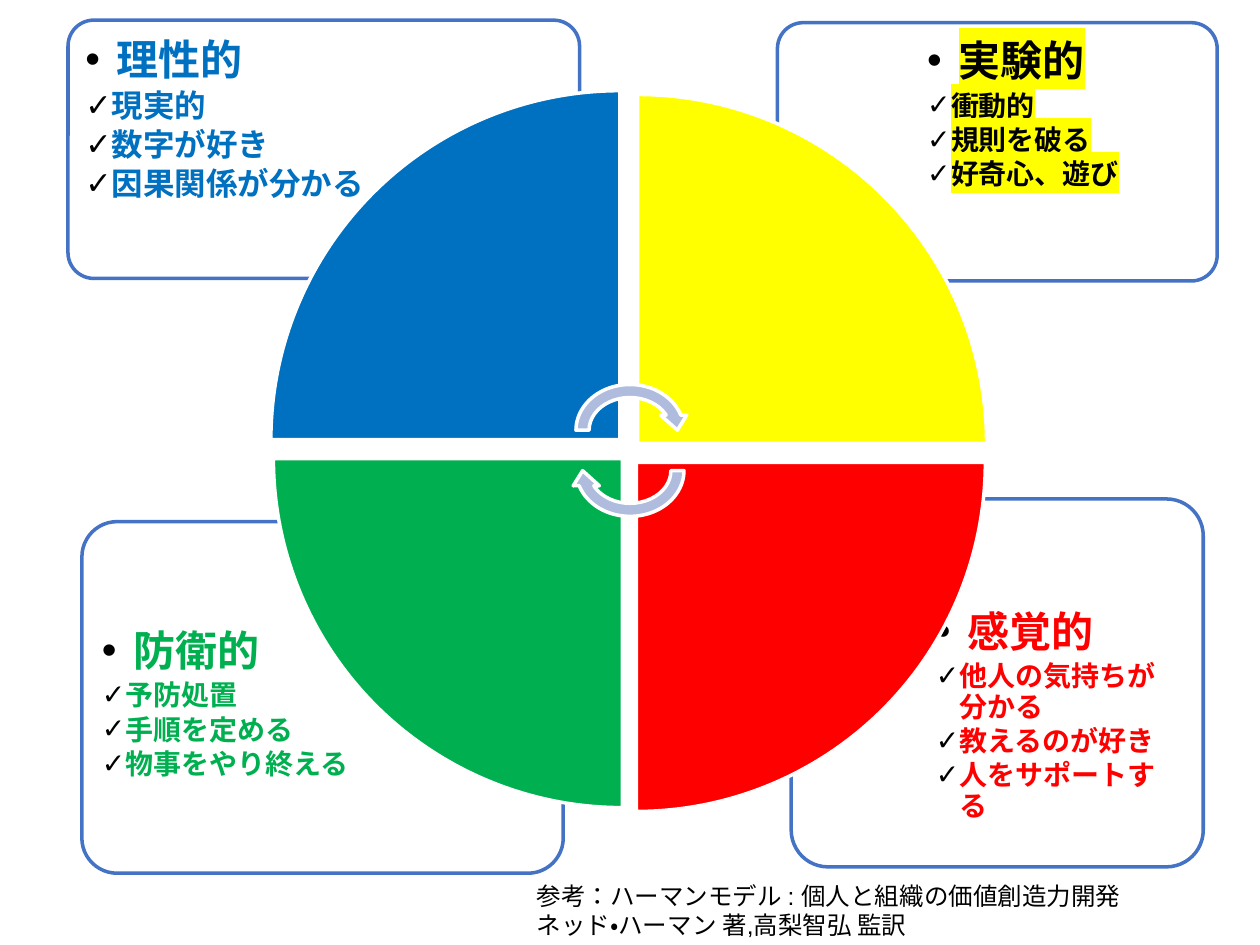
import pptx
import pptx.util
import pptx.dml.color
import pptx.enum.lang
import pptx.enum.shapes
import pptx.enum.text
import pptx.oxml
from pptx.oxml.ns import nsdecls

Inches, Pt = pptx.util.Inches, pptx.util.Pt
RGB = pptx.dml.color.RGBColor.from_string
KIND = pptx.enum.shapes.MSO_SHAPE

theme = {
    "font": "Arial", "black": "000000", "white": "FFFFFF", "edge": "4472C4",
    "arrow": "B0BCDE", "blue": "0070C0", "yellow": "FFFF00",
    "red": "FF0000", "green": "00B050",
    "head": 24, "item": 16, "large": 18, "note": 14, "line": 2,
}

deck = pptx.Presentation()
deck.slide_width, deck.slide_height = Inches(10), Inches(7.5)
slide = deck.slides.add_slide(deck.slide_layouts[6])


def draw(kind, box, fill, line, turn=0):
    shape = slide.shapes.add_shape(kind, *map(Inches, box))
    shape.shadow.inherit = False
    shape.rotation = turn
    shape.fill.solid()
    shape.fill.fore_color.rgb = RGB(theme[fill])
    shape.line.color.rgb = RGB(theme[line])
    shape.line.width = Pt(theme["line"])
    return shape


def write(para, text, size, color, bold=False):
    run = para.add_run()
    run.text = text
    style = {"name": theme["font"], "size": Pt(size), "bold": bold,
             "language_id": pptx.enum.lang.MSO_LANGUAGE_ID.JAPANESE}
    for key, value in style.items():
        setattr(run.font, key, value)
    run.font.color.rgb = RGB(theme[color])
    return run


# Cards: frame, text area, colour, highlight, item size, heading, items
cards = [
    ((6.28, 3.96, 3.27, 2.92), (7.33, 4.75, 2.16, 2.06), "red", None, "item",
     "感覚的", ["他人の気持ちが分かる", "教えるのが好き", "人をサポートする"]),
    ((0.65, 4.14, 3.82, 2.79), (0.71, 4.9, 2.55, 1.97), "green", None, "item",
     "防衛的", ["予防処置", "手順を定める", "物事をやり終える"]),
    ((6.17, 0.18, 3.49, 2.05), (7.26, 0.22, 2.35, 1.44), "black", "yellow", "item",
     "実験的", ["衝動的", "規則を破る", "好奇心、遊び"]),
    ((0.54, 0.16, 4.06, 2.05), (0.58, 0.21, 2.75, 1.44), "blue", None, "large",
     "理性的", ["現実的", "数字が好き", "因果関係が分かる"]),
]
for frame, area, color, mark, size, head, items in cards:
    card = draw(KIND.ROUNDED_RECTANGLE, frame, "white", "edge")
    card.adjustments[0] = 0.1
    tint = card.fill.fore_color._xFill[0]
    tint.append(pptx.oxml.parse_xml(f'<a:alpha {nsdecls("a")} val="90000"/>'))

    body = slide.shapes.add_textbox(*map(Inches, area)).text_frame
    body.word_wrap = True
    for side in ("left", "top", "right", "bottom"):
        setattr(body, f"margin_{side}", Inches(0.1))
    for n, text in enumerate([head] + items):
        para = body.add_paragraph() if n else body.paragraphs[0]
        points = theme[size] if n else theme["head"]
        sign, indent = ("✓", Inches(0.19)) if n else ("•", Inches(0.25))
        props = para._p.get_or_add_pPr()
        props.set("marL", str(indent))
        props.set("indent", str(-indent))
        for part in (f'<a:buClr {nsdecls("a")}><a:srgbClr val="{theme["black"]}"/></a:buClr>',
                     f'<a:buFont {nsdecls("a")} typeface="{theme["font"]}"/>',
                     f'<a:buChar {nsdecls("a")} char="{sign}"/>'):
            props.append(pptx.oxml.parse_xml(part))
        for key, value in {"level": 1, "line_spacing": 0.9,
                           "space_after": Pt(points * 0.15)}.items():
            setattr(para, key, value)
        run = write(para, text, points, color, True)
        if mark:
            run.font.fill._xPr.solidFill.addnext(pptx.oxml.parse_xml(
                f'<a:highlight {nsdecls("a")}><a:srgbClr val="{theme[mark]}"/></a:highlight>'))

# Wheel: four quarters, each a quarter turn further
wheel = [(2.15, 0.72, "blue"), (5.06, 0.75, "yellow"),
         (5.05, 3.67, "red"), (2.17, 3.64, "green")]
for n, (left, top, color) in enumerate(wheel):
    draw(KIND.PIE_WEDGE, (left, top, 2.77, 2.77), color, "white", n * 90)

# Arrows around the hub
for top, turn in ((3, 0), (3.32, 180)):
    draw(KIND.CIRCULAR_ARROW, (4.52, top, 0.96, 0.83), "arrow", "white", turn)

# Reference
note = slide.shapes.add_textbox(*map(Inches, (4.16, 6.94, 5.7, 0.57))).text_frame
note.word_wrap = True
note.auto_size = pptx.enum.text.MSO_AUTO_SIZE.SHAPE_TO_FIT_TEXT
for n, text in enumerate(["参考：ハーマンモデル : 個人と組織の価値創造力開発",
                          "ネッド・ハーマン 著,高梨智弘 監訳"]):
    para = note.add_paragraph() if n else note.paragraphs[0]
    write(para, text, theme["note"], "black")

deck.save("out.pptx")
